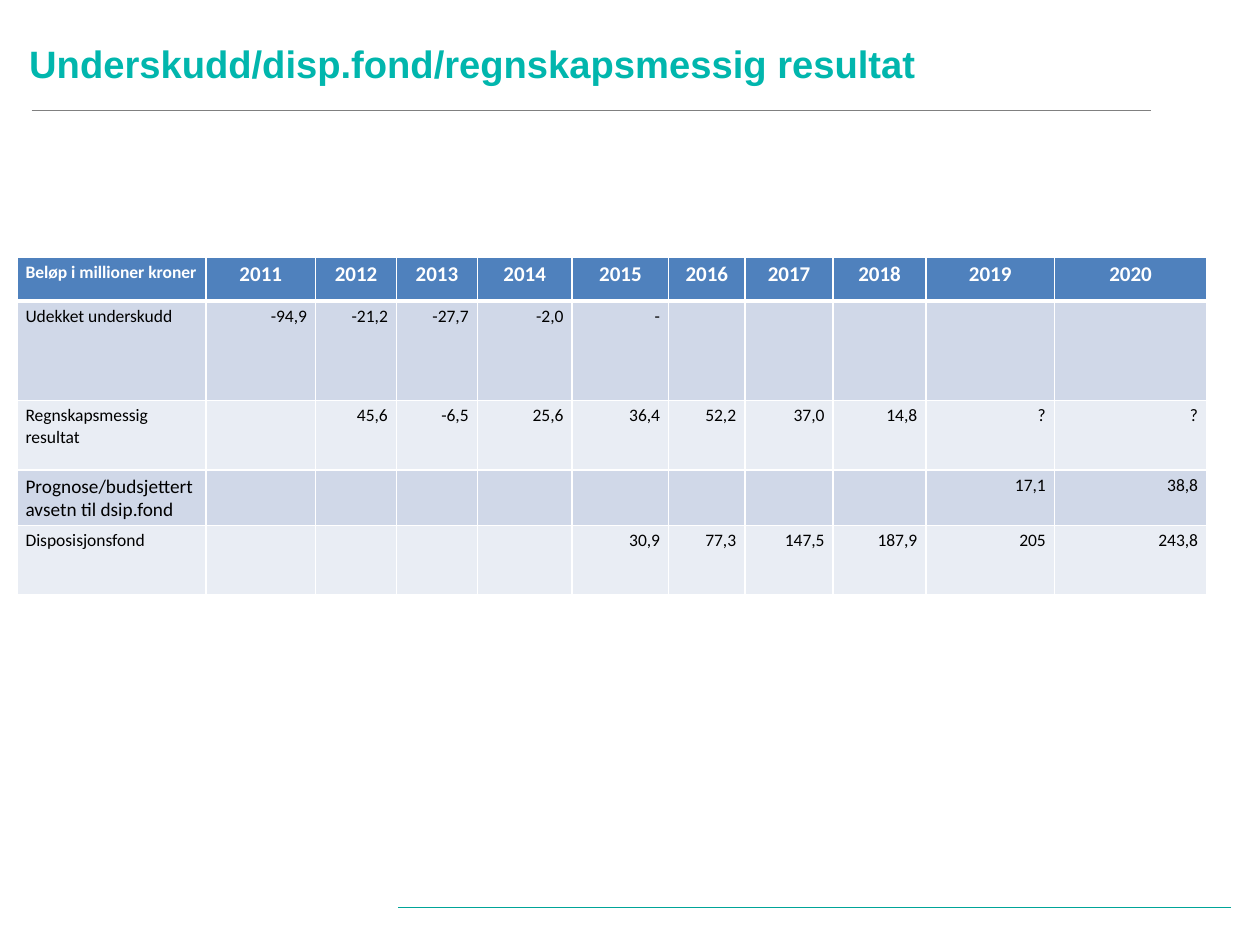
from lxml import etree
from pptx import Presentation
from pptx.dml.color import RGBColor
from pptx.enum.shapes import MSO_CONNECTOR
from pptx.enum.text import MSO_ANCHOR, PP_ALIGN
from pptx.oxml.ns import qn
from pptx.util import Pt

LEFT, CENTER, RIGHT = PP_ALIGN.LEFT, PP_ALIGN.CENTER, PP_ALIGN.RIGHT
STRAIGHT = MSO_CONNECTOR.STRAIGHT

THEME = {
    "title": "01B6AD", "title_rule": "808080", "footer_rule": "00A498",
    "header": "4F81BD", "bands": ("D0D8E8", "E9EDF4"),
    "white": "FFFFFF", "text": "000000",
    "title_font": "Arial", "table_font": "Calibri",
    "title_size": 21.8, "year_size": 12, "label_size": 11, "body_size": 10,
}

TITLE = "Underskudd/disp.fond/regnskapsmessig resultat"
YEARS = [str(year) for year in range(2011, 2021)]
FORECAST = "Prognose/budsjettert avsetn til dsip.fond"
# Label, first year with a value, values from that year on
SERIES = [
    ("Udekket underskudd", 2011, ["-94,9", "-21,2", "-27,7", "-2,0", "-"]),
    ("Regnskapsmessig resultat", 2012,
     ["45,6", "-6,5", "25,6", "36,4", "52,2", "37,0", "14,8", "?", "?"]),
    (FORECAST, 2019, ["17,1", "38,8"]),
    ("Disposisjonsfond", 2015,
     ["30,9", "77,3", "147,5", "187,9", "205", "243,8"]),
]
COLUMN_WIDTHS = [108, 62.8, 46.2, 46.2, 54.2, 55.2, 43.5, 50.5, 53, 73.5, 87]
ROW_HEIGHTS = [25, 57, 39.6, 30, 39.4]
TABLE_LEFT, TABLE_TOP = 9.6, 147

# x from, x to, y, colour, width
RULES = [
    (18, 658, 63, THEME["title_rule"], 0.5),
    (703.5, 227.5, 518.5, THEME["footer_rule"], 0.75),
]


def rgb(name):
    return RGBColor.from_string(name)


def style_run(r, font, size, color, bold):
    r.font.name, r.font.size, r.font.bold = font, Pt(size), bold
    r.font.color.rgb = rgb(color)


def add_rule(slide, x1, x2, y, color, width):
    line = slide.shapes.add_connector(STRAIGHT, Pt(x1), Pt(y), Pt(x2), Pt(y))
    line.line.color.rgb = rgb(color)
    line.line.width = Pt(width)
    etree.SubElement(line._element.spPr, qn("a:effectLst"))


def add_title(slide):
    box = slide.shapes.add_textbox(Pt(9.6), Pt(16), Pt(607), Pt(40))
    tf = box.text_frame
    tf.word_wrap = True
    tf.vertical_anchor = MSO_ANCHOR.MIDDLE
    tf.text = TITLE
    style_run(tf.paragraphs[0].runs[0], THEME["title_font"],
              THEME["title_size"], THEME["title"], True)


def set_borders(cell, top, bottom):
    """Draw white borders; they must precede the cell's fill element."""
    tc_pr = cell._tc.get_or_add_tcPr()
    widths = {"a:lnL": 1, "a:lnR": 1, "a:lnT": top, "a:lnB": bottom}
    for i, (tag, width) in enumerate(widths.items()):
        ln = etree.Element(qn(tag), w=str(Pt(width)))
        fill = etree.SubElement(ln, qn("a:solidFill"))
        etree.SubElement(fill, qn("a:srgbClr"), val=THEME["white"])
        tc_pr.insert(i, ln)


def fill_cell(cell, text, row, col):
    header = row == 0
    cell.margin_left = cell.margin_right = Pt(5)
    cell.margin_top = cell.margin_bottom = Pt(2.7)
    cell.fill.solid()
    cell.fill.fore_color.rgb = rgb(
        THEME["header"] if header else THEME["bands"][(row - 1) % 2])
    set_borders(cell, 3 if row == 1 else 1, 3 if header else 1)
    if not text:
        return
    cell.text_frame.text = text
    p = cell.text_frame.paragraphs[0]
    p.alignment = LEFT if col == 0 else CENTER if header else RIGHT
    size = THEME["body_size"]
    if header and col:
        size = THEME["year_size"]
    elif text == FORECAST:
        size = THEME["label_size"]
    style_run(p.runs[0], THEME["table_font"], size,
              THEME["white" if header else "text"], header)


def add_results_table(slide):
    rows = [["Beløp i millioner kroner"] + YEARS]
    for label, first, values in SERIES:
        cells = [label] + [""] * (first - int(YEARS[0])) + values
        rows.append(cells + [""] * (len(COLUMN_WIDTHS) - len(cells)))
    table = slide.shapes.add_table(
        len(rows), len(COLUMN_WIDTHS), Pt(TABLE_LEFT), Pt(TABLE_TOP),
        Pt(sum(COLUMN_WIDTHS)), Pt(sum(ROW_HEIGHTS))).table
    for column, width in zip(table.columns, COLUMN_WIDTHS):
        column.width = Pt(width)
    for table_row, height in zip(table.rows, ROW_HEIGHTS):
        table_row.height = Pt(height)
    for row, cells in enumerate(rows):
        for col, text in enumerate(cells):
            fill_cell(table.cell(row, col), text, row, col)


def main():
    prs = Presentation()
    prs.slide_width, prs.slide_height = Pt(720), Pt(540)
    slide = prs.slides.add_slide(prs.slide_layouts[6])
    for rule in RULES:
        add_rule(slide, *rule)
    add_title(slide)
    add_results_table(slide)
    prs.save("out.pptx")


if __name__ == "__main__":
    main()
